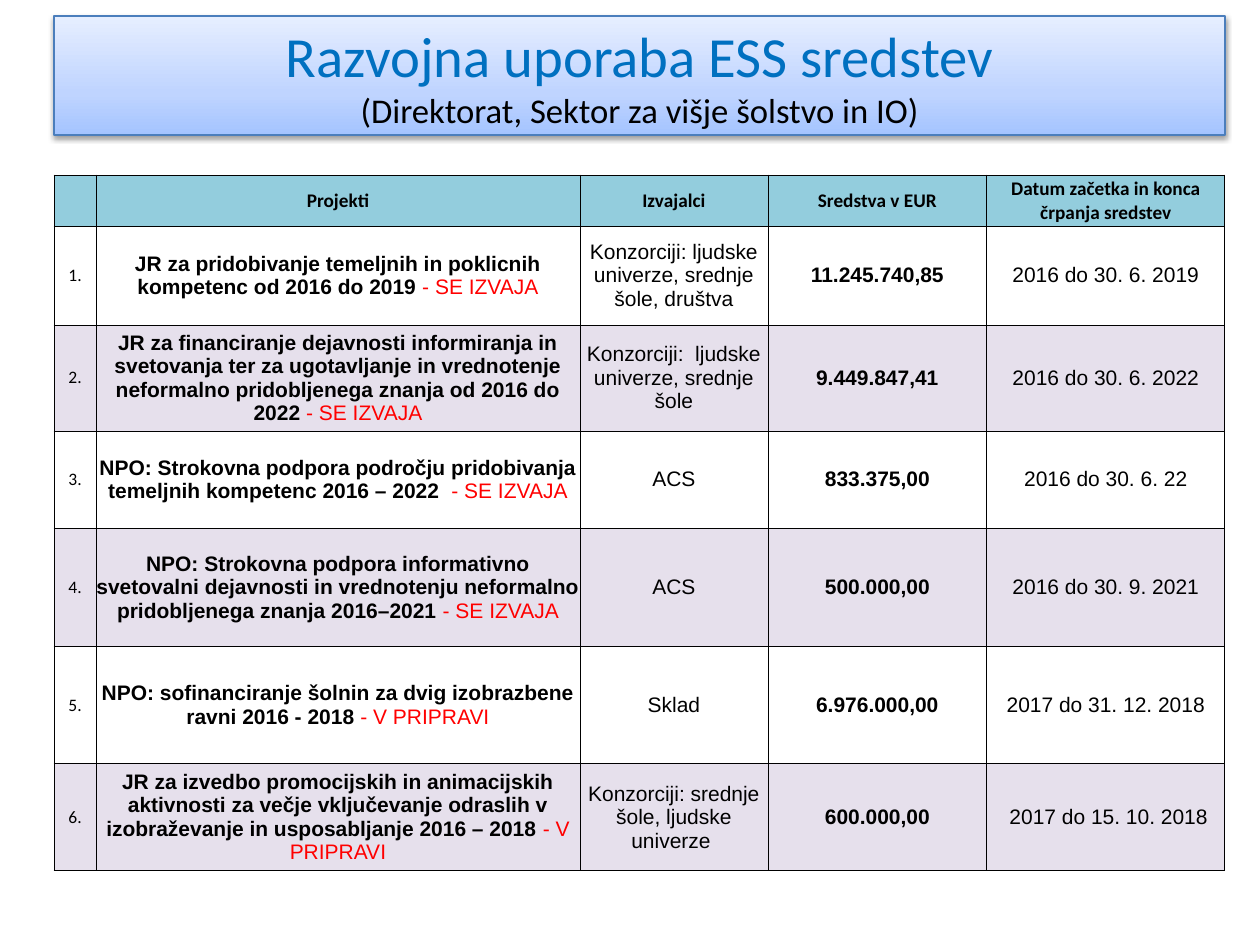
from dataclasses import dataclass

import lxml.etree
import pptx
import pptx.dml.color
import pptx.enum.text
import pptx.oxml
import pptx.oxml.ns
import pptx.util

PX_PER_INCH = 126


@dataclass(frozen=True)
class Theme:
    heading_font: str = "Calibri"
    body_font: str = "Arial"
    title: str = "0070C0"
    text: str = "000000"
    status: str = "FF0000"
    header_fill: str = "93CDDD"
    band_fill: str = "E6E0EC"
    banner_line: str = "4B7EBC"
    banner_stops: tuple = ((0, "A4C4FF"), (35, "BFD4FF"), (100, "E6EEFF"))
    title_size: float = 32.4
    subtitle_size: float = 19.8
    header_size: float = 11
    number_size: float = 10
    body_size: float = 12


@dataclass(frozen=True)
class Project:
    name: str
    status: str
    contractor: str
    funds: str
    period: str
    height: int


THEME = Theme()
LEFT, WIDTH = 54, 1171
COLUMNS = (42, 484, 188, 219, 238)
HEADERS = ("", "Projekti", "Izvajalci", "Sredstva v EUR",
           "Datum začetka in konca črpanja sredstev")
HEADER_HEIGHT = 51
RUNNING, PREPARING = "- SE IZVAJA", "- V PRIPRAVI"
PROJECTS = (
    Project("JR za pridobivanje temeljnih in poklicnih kompetenc od 2016 do 2019 ",
            RUNNING, "Konzorciji: ljudske univerze, srednje šole, društva",
            "11.245.740,85", " 2016 do 30. 6. 2019 ", 99),
    Project("JR za financiranje dejavnosti informiranja in svetovanja ter za ugotavljanje "
            "in vrednotenje neformalno pridobljenega znanja od 2016 do 2022 ",
            RUNNING, "Konzorciji:  ljudske univerze, srednje šole",
            "9.449.847,41", "2016 do 30. 6. 2022", 106),
    Project("NPO: Strokovna podpora področju pridobivanja temeljnih kompetenc 2016 – 2022  ",
            RUNNING, "ACS", "833.375,00", "2016 do 30. 6. 22", 97),
    Project("NPO: Strokovna podpora informativno svetovalni dejavnosti in vrednotenju "
            "neformalno pridobljenega znanja 2016–2021 ",
            RUNNING, "ACS", "500.000,00", "2016 do 30. 9. 2021", 119),
    Project("NPO: sofinanciranje šolnin za dvig izobrazbene ravni 2016 - 2018 ",
            PREPARING, "Sklad", "6.976.000,00", "2017 do 31. 12. 2018", 117),
    Project("JR za izvedbo promocijskih in animacijskih aktivnosti za večje vključevanje "
            "odraslih v izobraževanje in usposabljanje 2016 – 2018 ",
            PREPARING, "Konzorciji: srednje šole, ljudske univerze ",
            "600.000,00", " 2017 do 15. 10. 2018", 107),
)


def px(n: int) -> int:
    return pptx.util.Emu(round(n * 914400 / PX_PER_INCH))


def rgb(color: str) -> pptx.dml.color.RGBColor:
    return pptx.dml.color.RGBColor.from_string(color)


def append_xml(parent: lxml.etree.ElementBase, xml: str) -> None:
    """Append a DrawingML element, declaring the a: namespace on its root tag."""
    head, rest = xml.split(" ", 1)
    parent.append(pptx.oxml.parse_xml(f"{head} {pptx.oxml.ns.nsdecls('a')} {rest}"))


def add_text(p, text: str, *, size: float, font: str = THEME.body_font,
             color: str = THEME.text, bold: bool = False) -> None:
    p.alignment = pptx.enum.text.PP_ALIGN.CENTER
    r = p.add_run()
    r.text = text
    r.font.name = font
    r.font.size = pptx.util.Pt(size)
    r.font.bold = bold
    r.font.color.rgb = rgb(color)


def draw_title(s) -> None:
    sp = s.shapes.title
    sp.left, sp.top, sp.width, sp.height = px(LEFT), px(16), px(WIDTH), px(119)
    pr = sp.element.spPr
    append_xml(pr, '<a:prstGeom prst="rect"><a:avLst/></a:prstGeom>')
    stops = "".join(f'<a:gs pos="{pos * 1000}"><a:srgbClr val="{color}"/></a:gs>'
                    for pos, color in THEME.banner_stops)
    append_xml(pr, f'<a:gradFill rotWithShape="1"><a:gsLst>{stops}</a:gsLst>'
                   '<a:lin ang="16200000" scaled="0"/></a:gradFill>')
    sp.line.color.rgb = rgb(THEME.banner_line)
    sp.line.width = pptx.util.Pt(0.75)
    append_xml(pr, '<a:effectLst ><a:outerShdw blurRad="39370" dist="20320" dir="5400000" '
                   'rotWithShape="0"><a:srgbClr val="000000"><a:alpha val="38000"/>'
                   '</a:srgbClr></a:outerShdw></a:effectLst>')
    tf = sp.text_frame
    tf.word_wrap = True
    tf.auto_size = pptx.enum.text.MSO_AUTO_SIZE.NONE
    tf.vertical_anchor = pptx.enum.text.MSO_ANCHOR.MIDDLE
    p = tf.paragraphs[0]
    add_text(p, "Razvojna uporaba ESS sredstev", size=THEME.title_size,
             font=THEME.heading_font, color=THEME.title)
    p.add_line_break()
    add_text(p, "(Direktorat, Sektor za višje šolstvo in IO)",
             size=THEME.subtitle_size, font=THEME.heading_font)


def format_cell(cell, fill: str | None) -> None:
    cell.margin_left = cell.margin_right = cell.margin_top = cell.margin_bottom = 0
    cell.vertical_anchor = pptx.enum.text.MSO_ANCHOR.MIDDLE
    for side in "LRTB":
        append_xml(cell._tc.get_or_add_tcPr(),
                   f'<a:ln{side} w="6350"><a:solidFill><a:srgbClr val="{THEME.text}"/>'
                   f'</a:solidFill></a:ln{side}>')
    if fill:
        cell.fill.solid()
        cell.fill.fore_color.rgb = rgb(fill)
    else:
        cell.fill.background()


def draw_table(s) -> None:
    heights = (HEADER_HEIGHT, *(project.height for project in PROJECTS))
    table = s.shapes.add_table(len(heights), len(COLUMNS), px(LEFT), px(175),
                               px(WIDTH), px(sum(heights))).table
    table.first_row = table.horz_banding = False
    for column, width in zip(table.columns, COLUMNS):
        column.width = px(width)
    for i, (row, height) in enumerate(zip(table.rows, heights)):
        row.height = px(height)
        fill = THEME.header_fill if i == 0 else None if i % 2 else THEME.band_fill
        for cell in row.cells:
            format_cell(cell, fill)

    for cell, header in zip(table.rows[0].cells, HEADERS):
        if header:
            add_text(cell.text_frame.paragraphs[0], header, size=THEME.header_size,
                     font=THEME.heading_font, bold=True)
    for i, project in enumerate(PROJECTS, 1):
        number, name, contractor, funds, period = (
            cell.text_frame.paragraphs[0] for cell in table.rows[i].cells)
        size = THEME.body_size
        add_text(number, f"{i}.", size=THEME.number_size, font=THEME.heading_font)
        add_text(name, project.name, size=size, bold=True)
        add_text(name, project.status, size=size, color=THEME.status)
        add_text(contractor, project.contractor, size=size)
        add_text(funds, project.funds, size=size, bold=True)
        add_text(period, project.period, size=size)


def main() -> None:
    prs = pptx.Presentation()
    prs.slide_width, prs.slide_height = pptx.util.Inches(10), pptx.util.Inches(7.5)
    s = prs.slides.add_slide(prs.slide_layouts.get_by_name("Title Only"))
    draw_title(s)
    draw_table(s)
    prs.save("out.pptx")


if __name__ == "__main__":
    main()
